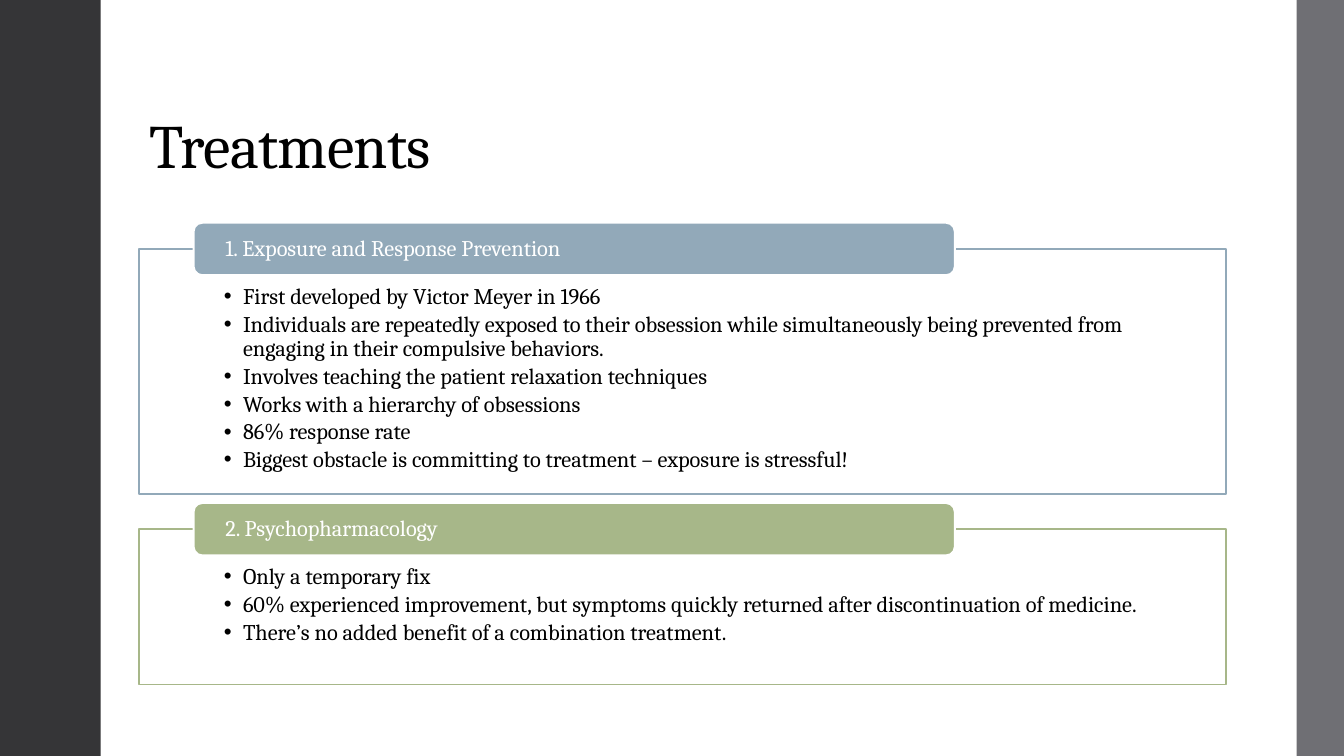
from lxml import etree
from pptx import Presentation
from pptx.dml.color import RGBColor
from pptx.enum.shapes import MSO_SHAPE
from pptx.enum.text import MSO_ANCHOR, MSO_AUTO_SIZE, PP_ALIGN
from pptx.oxml.ns import qn
from pptx.util import Inches, Pt

RECT, ROUND = MSO_SHAPE.RECTANGLE, MSO_SHAPE.ROUNDED_RECTANGLE
TOP, MIDDLE, BOTTOM = MSO_ANCHOR.TOP, MSO_ANCHOR.MIDDLE, MSO_ANCHOR.BOTTOM
LEFT, FIXED = PP_ALIGN.LEFT, MSO_AUTO_SIZE.NONE
WHITE, BLACK, DARK, GRAY = "FFFFFF", "000000", "353537", "6F6F74"
BLUE, GREEN = "92A9B9", "A7B789"

SECTIONS = [
    (2.47, 2.43, BLUE, "1. Exposure and Response Prevention", [
        "First developed by Victor Meyer in 1966",
        "Individuals are repeatedly exposed to their obsession while "
        "simultaneously being prevented from engaging in their compulsive behaviors.",
        "Involves teaching the patient relaxation techniques",
        "Works with a hierarchy of obsessions",
        "86% response rate",
        "Biggest obstacle is committing to treatment – exposure is stressful!",
    ]),
    (5.25, 1.54, GREEN, "2. Psychopharmacology", [
        "Only a temporary fix",
        "60% experienced improvement, but symptoms quickly returned after "
        "discontinuation of medicine.",
        "There’s no added benefit of a combination treatment.",
    ]),
]


def color(code):
    return RGBColor.from_string(code)


def write(shape, lines, size=16, ink=BLACK, anchor=TOP, inset=(0.1, 0.05, 0.1, 0.05),
          after=0, track=0, bullet=False):
    frame = shape.text_frame
    frame.word_wrap, frame.auto_size = True, FIXED
    frame.vertical_anchor = anchor
    (frame.margin_left, frame.margin_top,
     frame.margin_right, frame.margin_bottom) = map(Inches, inset)
    frame.text = "\n".join(lines)
    for para in frame.paragraphs:
        para.alignment, para.line_spacing = LEFT, 0.9
        para.space_before, para.space_after = Pt(0), Pt(after)
        run = para.runs[0]
        run.font.name, run.font.size = "Cambria", Pt(size)
        run.font.color.rgb = color(ink)
        if track:
            run.font._element.set("spc", str(int(track * 100)))
        if bullet:
            props = para._p.get_or_add_pPr()
            props.set("marL", str(Inches(0.19)))
            props.set("indent", str(-Inches(0.19)))
            etree.SubElement(props, qn("a:buFont")).set("typeface", "Arial")
            etree.SubElement(props, qn("a:buChar")).set("char", "•")


class Deck:
    """Holds the presentation, its slide and the look of its elements."""

    def __init__(self):
        self.prs = Presentation()
        self.prs.slide_width, self.prs.slide_height = Inches(13.33), Inches(7.5)
        self.slide = self.prs.slides.add_slide(self.prs.slide_layouts[5])
        back = self.slide.background.fill
        back.solid()
        back.fore_color.rgb = color(WHITE)

    def title(self, text):
        head = self.slide.shapes.title
        head.left, head.top, head.width, head.height = map(
            Inches, (1.38, 0.4, 10.78, 1.45))
        write(head, [text], size=44, anchor=BOTTOM, track=-0.5)

    def block(self, kind, place, fill, line=None, weight=1):
        shape = self.slide.shapes.add_shape(kind, *map(Inches, place))
        shape.shadow.inherit = False
        shape.fill.solid()
        shape.fill.fore_color.rgb = color(fill)
        if line:
            shape.line.color.rgb = color(line)
            shape.line.width = Pt(weight)
        else:
            shape.line.fill.background()
        return shape

    def section(self, top, height, tint, name, points):
        """Draws a framed bullet list with a label over its top edge."""
        body = self.block(RECT, (1.38, top, 10.78, height), WHITE, tint, 1.1)
        write(body, points, inset=(0.84, 0.36, 0.84, 0.12), after=2.6, bullet=True)
        label = self.block(ROUND, (1.92, top - 0.26, 7.55, 0.52), tint, WHITE, 1.35)
        write(label, [name], ink=WHITE, anchor=MIDDLE, inset=(0.29, 0, 0.29, 0))


def main():
    deck = Deck()
    deck.title("Treatments")
    deck.block(RECT, (0, 0, 1, 7.5), DARK)
    deck.block(RECT, (12.86, 0, 0.47, 7.5), GRAY)
    for part in SECTIONS:
        deck.section(*part)
    deck.prs.save("out.pptx")


if __name__ == "__main__":
    main()
